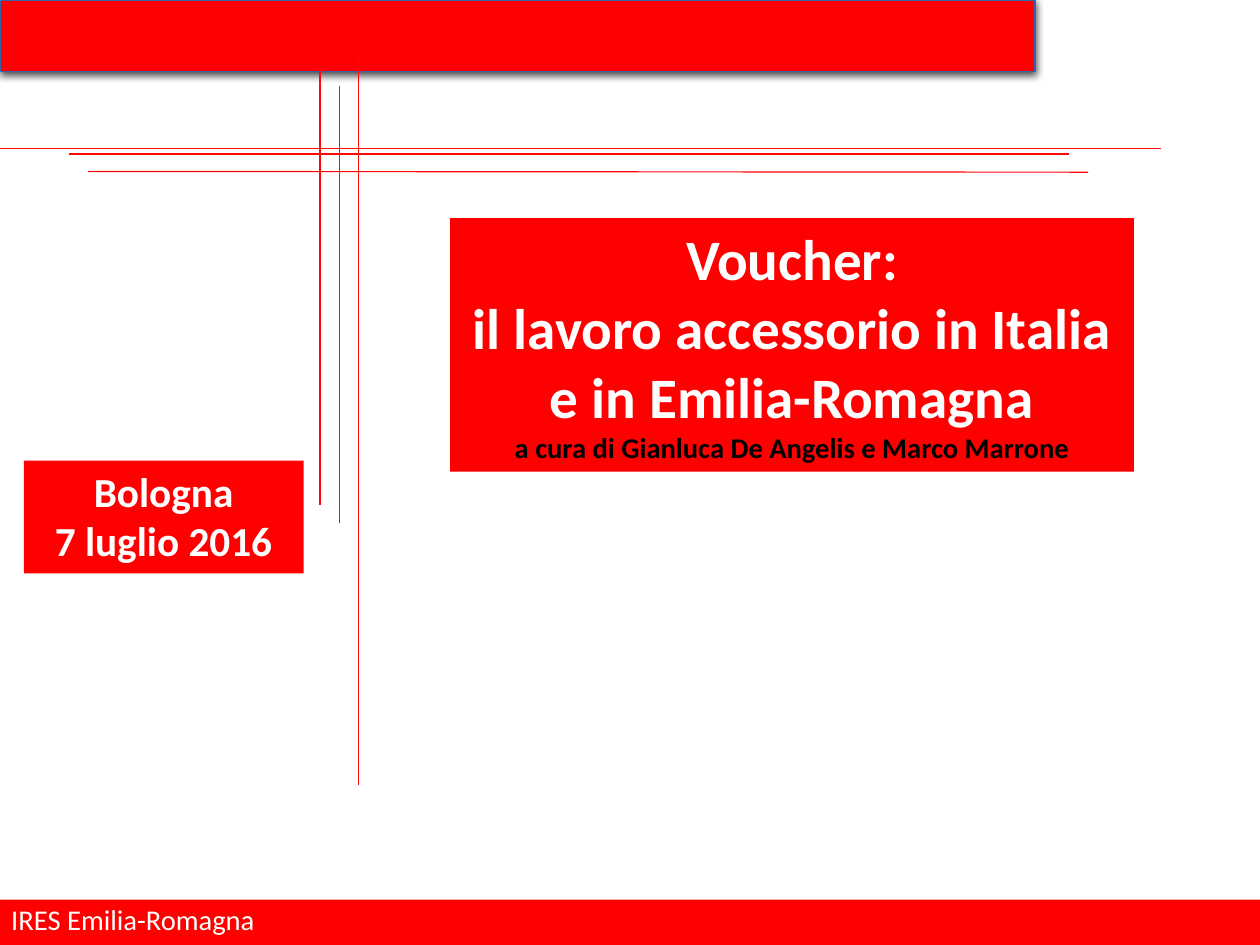
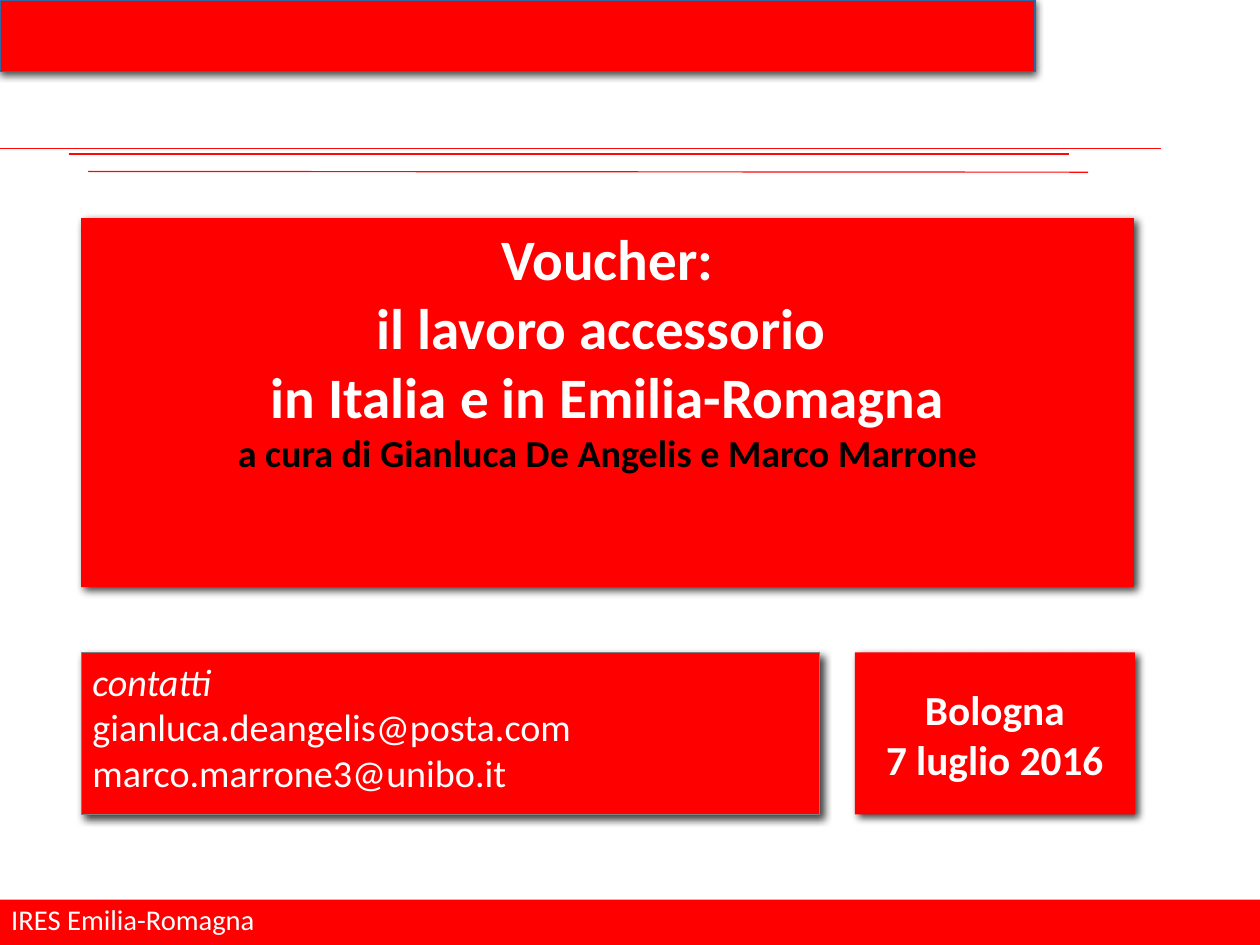
"""Build the title and closing slides of the voucher presentation."""
from lxml.etree import SubElement
from pptx import Presentation
from pptx.dml.color import RGBColor
from pptx.enum.shapes import MSO_CONNECTOR as Connector, MSO_SHAPE as Shape
from pptx.enum.text import MSO_ANCHOR as Anchor, PP_ALIGN as Align
from pptx.oxml.ns import qn
from pptx.util import Emu, Inches, Pt

RED, RULE_RED, WHITE, BLACK = "FF0000", "FF0707", "FFFFFF", "000000"
FONT = "Calibri"
SOFT_SHADOW = (BLACK, 75, 5, 3, 45)
BAND_SHADOW = ("4C4C4C", 100, 5, 1.4, 90)

deck = Presentation()
deck.slide_width, deck.slide_height = Emu(10080625), Emu(7559675)
column, row = deck.slide_width / 100, deck.slide_height / 100


def paint(target, colour):
    """Give a fill, line or font colour from a hex string."""
    if hasattr(target, "solid"):
        target.solid()
        target = target.fore_color
    else:
        target = target.color
    target.rgb = RGBColor.from_string(colour)


def add_box(page, area, lines=(), align=Align.CENTER, outline=None, shadow=None,
            inset=0.05, spacing=None):
    """Add a red box; each line is text, size, colour, bold, italic."""
    left, top, width, height = area
    box = page.shapes.add_shape(Shape.RECTANGLE, int(left * column), int(top * row),
                                int(width * column), int(height * row))
    paint(box.fill, RED)
    if outline:
        paint(box.line, outline)
        box.line.width = Pt(0.75)
    else:
        box.line.fill.background()
    box.shadow.inherit = False
    if shadow:
        colour, opacity, blur, distance, angle = shadow
        effects = box._element.spPr.find(qn("a:effectLst"))
        outer = SubElement(effects, qn("a:outerShdw"), blurRad=str(Pt(blur)),
                           dist=str(Pt(distance)), dir=str(angle * 60000),
                           algn="tl", rotWithShape="0")
        tint = SubElement(outer, qn("a:srgbClr"), val=colour)
        SubElement(tint, qn("a:alpha"), val=str(opacity * 1000))
    frame = box.text_frame
    frame.word_wrap = True
    frame.vertical_anchor = Anchor.TOP
    frame.margin_top = Inches(inset)
    for index, (text, size, colour, bold, italic) in enumerate(lines):
        para = frame.add_paragraph() if index else frame.paragraphs[0]
        para.alignment = align
        if spacing:
            para.line_spacing = spacing
        for part, words in enumerate(text.split("\n")):
            if part:
                para.add_line_break()
            span = para.add_run()
            span.text = words
            font = span.font
            font.name, font.size, font.bold, font.italic = FONT, Pt(size), bold, italic
            paint(font, colour)


header_rules = [
    (0, 15.72, 92.15, 15.72),
    (5.44, 16.3, 84.82, 16.3),
    (6.99, 18.14, 86.36, 18.22),
]
cover_rules = [
    (25.4, 7.01, 25.4, 53.45),
    (28.46, 5.32, 28.46, 83.07),
    (26.93, 9.07, 26.93, 55.38),
]
pages = []
for rules in (header_rules + cover_rules, header_rules):
    page = deck.slides.add_slide(deck.slide_layouts[6])
    add_box(page, (0, 0, 82.15, 7.62), outline="3465A4", shadow=BAND_SHADOW)
    add_box(page, (0, 95.2, 100, 4.8),
            [("IRES Emilia-Romagna", 18, WHITE, False, False)],
            align=Align.LEFT, spacing=0.93)
    for x1, y1, x2, y2 in rules:
        rule = page.shapes.add_connector(Connector.STRAIGHT, int(x1 * column), int(y1 * row),
                                         int(x2 * column), int(y2 * row))
        paint(rule.line, RULE_RED)
        rule.line.width = Pt(0.75)
        SubElement(rule._element.spPr, qn("a:effectLst"))
    pages.append(page)
cover, closing = pages

authors = "a cura di Gianluca De Angelis e Marco Marrone"
place_and_date = [(text, 26, WHITE, True, False) for text in ("Bologna", "7 luglio 2016")]

add_box(cover, (35.73, 23.08, 54.26, 26.84), [
    ("Voucher:\nil lavoro accessorio in Italia e in Emilia-Romagna", 36, WHITE, True, False),
    (authors, 18, BLACK, True, False),
])
add_box(cover, (1.9, 48.73, 22.2, 11.95), place_and_date)

add_box(closing, (6.44, 23.08, 83.56, 39.06), [
    ("Voucher:\nil lavoro accessorio ", 36, WHITE, True, False),
    ("in Italia e in Emilia-Romagna", 36, WHITE, True, False),
    (authors, 24, BLACK, True, False),
], shadow=SOFT_SHADOW)
add_box(closing, (67.86, 69.04, 22.22, 17.15), place_and_date,
        shadow=SOFT_SHADOW, inset=0.28)
add_box(closing, (6.44, 69.04, 58.6, 17.15), [
    ("contatti", 24, WHITE, False, True),
    ("gianluca.deangelis@posta.com", 24, WHITE, False, False),
    ("marco.marrone3@unibo.it", 24, WHITE, False, False),
], align=Align.LEFT, outline="808080", shadow=SOFT_SHADOW)

deck.save("out.pptx")
